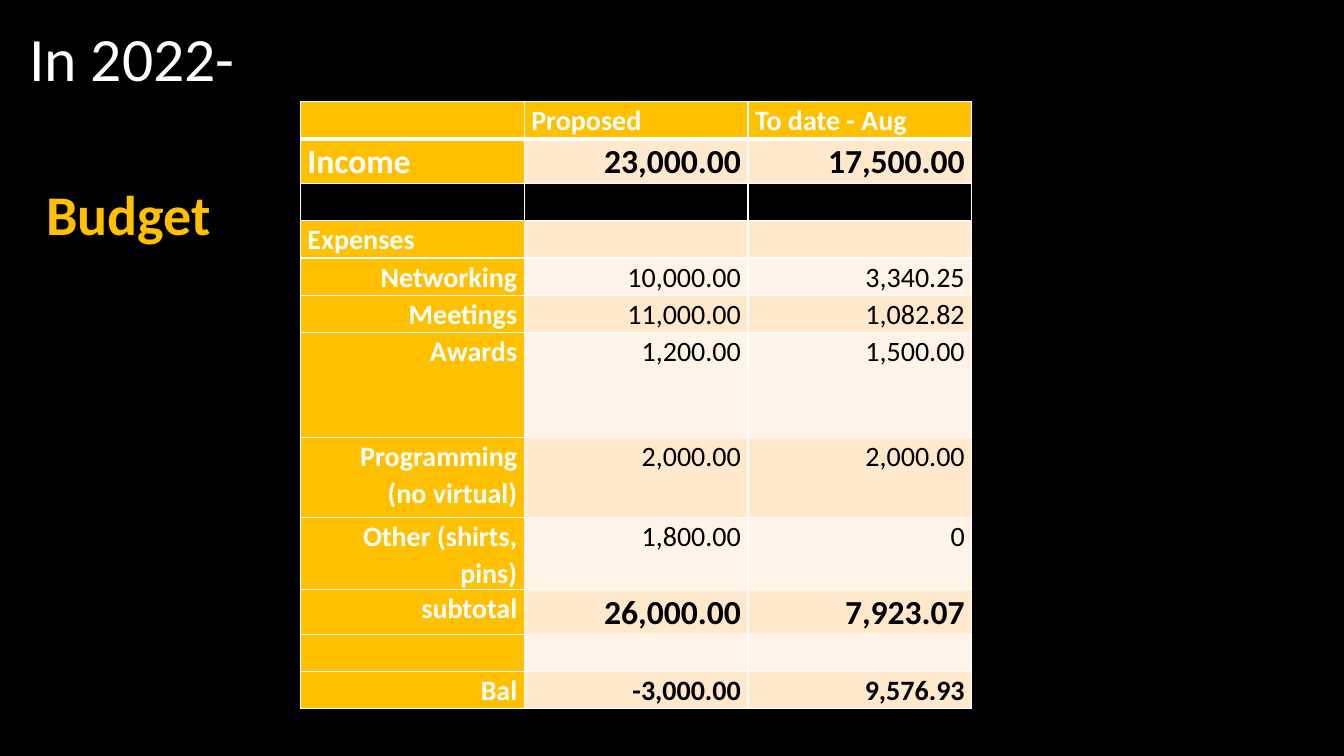
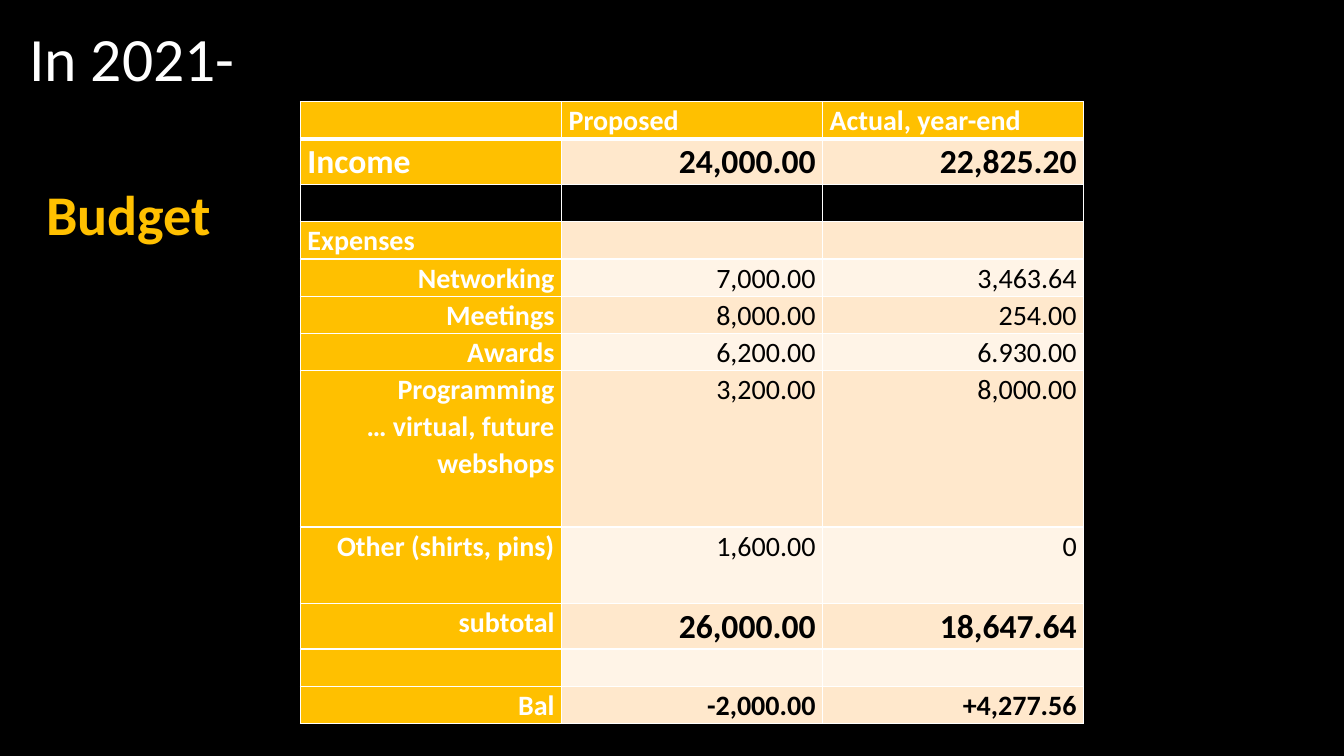
from dataclasses import dataclass

from lxml.etree import SubElement
from pptx import Presentation
from pptx.dml.color import RGBColor as Rgb
from pptx.enum.text import MSO_ANCHOR as Anchor, PP_ALIGN as Align
from pptx.oxml.ns import qn
from pptx.util import Inches, Pt


@dataclass(frozen=True)
class Theme:
    font: str = "Calibri"
    black: str = "000000"
    white: str = "FFFFFF"
    gold: str = "FFC000"
    band_dark: str = "FFE8CC"
    band_light: str = "FFF4E7"
    title_size: int = 44
    heading_size: int = 40
    total_size: int = 24
    body_size: int = 20
    thin: int = 1
    thick: int = 3


class BudgetDeck:
    """Build black budget slides that share one theme."""

    def __init__(self, theme):
        self.theme = theme
        self.deck = Presentation()
        self.deck.slide_width = Inches(13.33)
        self.deck.slide_height = Inches(7.5)
        self.page = None

    def add_page(self):
        self.page = self.deck.slides.add_slide(self.deck.slide_layouts[6])
        self.paint(self.page.background, self.theme.black)

    def paint(self, target, color):
        target.fill.solid()
        target.fill.fore_color.rgb = Rgb.from_string(color)

    def fill_text(self, frame, text, size, color, bold=False, align=Align.LEFT, spacing=1.0):
        for index, line in enumerate(text.split("\n")):
            para = frame.paragraphs[0] if index == 0 else frame.add_paragraph()
            para.alignment = align
            para.line_spacing = spacing
            span = para.add_run()
            span.text = line
            formats = {"name": self.theme.font, "size": Pt(size), "bold": bold}
            for name, value in formats.items():
                setattr(span.font, name, value)
            span.font.color.rgb = Rgb.from_string(color)

    def add_text(self, text, place, anchor=Anchor.TOP, **style):
        box = self.page.shapes.add_textbox(*map(Inches, place))
        frame = box.text_frame
        frame.word_wrap = True
        frame.vertical_anchor = anchor
        self.fill_text(frame, text, **style)

    def add_title(self, text):
        self.add_text(text, (0.19, -0.11, 11.5, 1.45), Anchor.MIDDLE,
                      size=self.theme.title_size, color=self.theme.white, spacing=0.9)

    def add_heading(self, text):
        self.add_text(text, (0.36, 1.73, 3.18, 0.77),
                      size=self.theme.heading_size, color=self.theme.gold, bold=True)

    def add_borders(self, cell, row):
        theme = self.theme
        widths = {"a:lnL": theme.thin, "a:lnR": theme.thin,
                  "a:lnT": theme.thick if row == 1 else theme.thin,
                  "a:lnB": theme.thick if row == 0 else theme.thin}
        properties = cell._tc.get_or_add_tcPr()
        for tag, width in widths.items():
            line = SubElement(properties, qn(tag), w=str(Pt(width)))
            fill = SubElement(line, qn("a:solidFill"))
            SubElement(fill, qn("a:srgbClr"), val=theme.white)

    def cell_fill(self, row, column, spacer):
        if row == spacer:
            return self.theme.black
        if row == 0 or column == 0:
            return self.theme.gold
        return self.theme.band_dark if row % 2 else self.theme.band_light

    def cell_style(self, row, column, label):
        theme = self.theme
        heading = row == 0 or column == 0
        large = label == "Income" or (label == "subtotal" and column > 0)
        left = row == 0 or (column == 0 and label in ("Income", "Expenses"))
        return {"size": theme.total_size if large else theme.body_size,
                "color": theme.white if heading else theme.black,
                "bold": heading or label in ("Income", "subtotal", "Bal"),
                "align": Align.LEFT if left else Align.RIGHT,
                "spacing": 1.07}

    def add_budget(self, rows, column_width, tall_rows, row_height=0.37, spacer=2):
        heights = [tall_rows.get(row[0].split("\n")[0], row_height) for row in rows]
        count = len(rows[0])
        table = self.page.shapes.add_table(
            len(rows), count, Inches(2.98), Inches(1.01),
            Inches(column_width * count), Inches(sum(heights))).table
        table.first_col = True
        for column in table.columns:
            column.width = Inches(column_width)
        margins = {"margin_left": Inches(0.07), "margin_right": Inches(0.07),
                   "margin_top": 0, "margin_bottom": 0}
        for r, values in enumerate(rows):
            table.rows[r].height = Inches(heights[r])
            for c, text in enumerate(values):
                cell = table.cell(r, c)
                for name, value in margins.items():
                    setattr(cell, name, value)
                self.add_borders(cell, r)
                self.paint(cell, self.cell_fill(r, c, spacer))
                if text:
                    self.fill_text(cell.text_frame, text, **self.cell_style(r, c, values[0]))


BUDGETS = [
    ("In 2022-", 2.22,
     {"Income": 0.44, "Awards": 1.04, "Programming": 0.8,
      "Other (shirts, pins)": 0.69, "subtotal": 0.44},
     [("", "Proposed", "To date - Aug"),
      ("Income", "23,000.00", "17,500.00"),
      ("", "", ""),
      ("Expenses", "", ""),
      ("Networking", "10,000.00", "3,340.25"),
      ("Meetings", "11,000.00", "1,082.82"),
      ("Awards", "1,200.00", "1,500.00"),
      ("Programming\n(no virtual)", "2,000.00", "2,000.00"),
      ("Other (shirts, pins)", "1,800.00", "0"),
      ("subtotal", "26,000.00", "7,923.07"),
      ("", "", ""),
      ("Bal", "-3,000.00", "9,576.93")]),
    ("In 2021-", 2.59,
     {"Income": 0.45, "Programming": 1.55,
      "Other (shirts, pins)": 0.76, "subtotal": 0.45},
     [("", "Proposed", "Actual, year-end"),
      ("Income", "24,000.00", "22,825.20"),
      ("", "", ""),
      ("Expenses", "", ""),
      ("Networking", "7,000.00", "3,463.64"),
      ("Meetings", "8,000.00", "254.00"),
      ("Awards", "6,200.00", "6.930.00"),
      ("Programming\n… virtual, future webshops", "3,200.00", "8,000.00"),
      ("Other (shirts, pins)", "1,600.00", "0"),
      ("subtotal", "26,000.00", "18,647.64"),
      ("", "", ""),
      ("Bal", "-2,000.00", "+4,277.56")]),
]


def main():
    builder = BudgetDeck(Theme())
    for title, column_width, tall_rows, rows in BUDGETS:
        builder.add_page()
        builder.add_title(title)
        builder.add_heading("Budget")
        builder.add_budget(rows, column_width, tall_rows)
    builder.deck.save("out.pptx")


if __name__ == "__main__":
    main()
